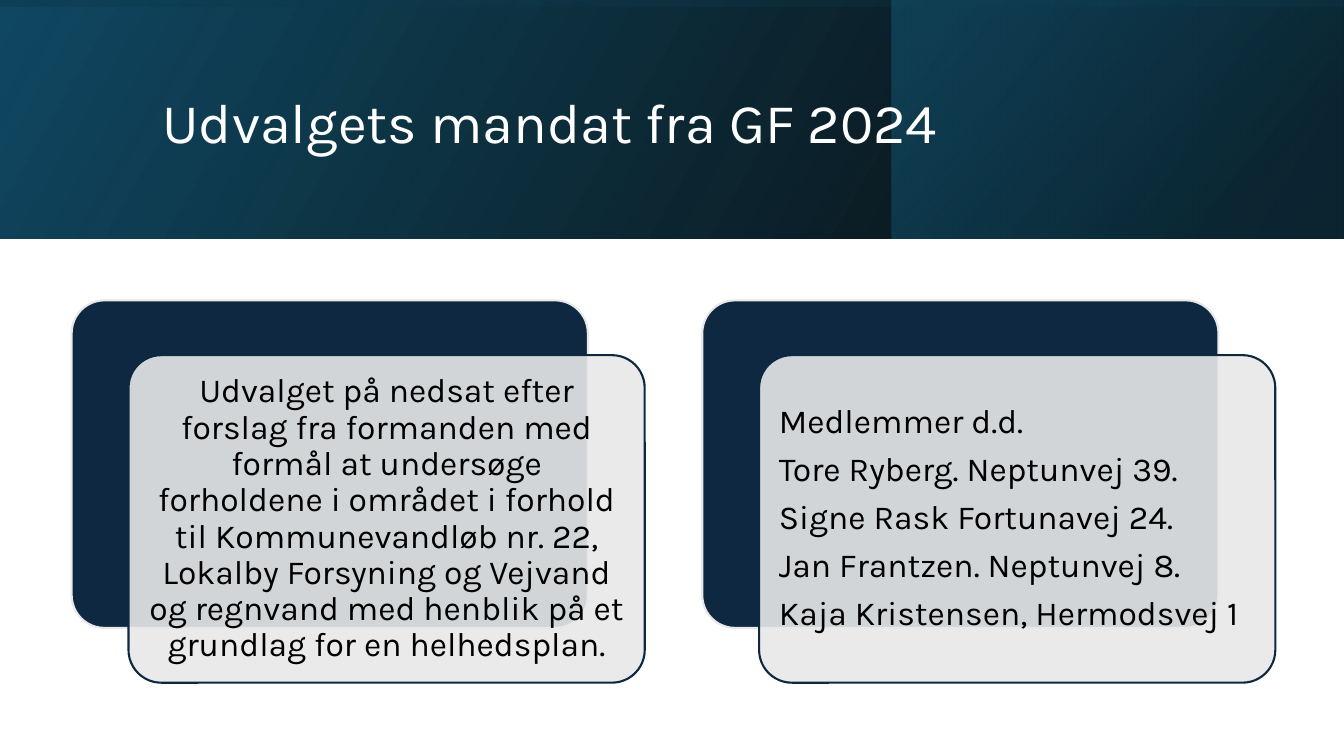
from dataclasses import dataclass

from lxml import etree
from pptx import Presentation
from pptx import util as u
from pptx.dml.color import RGBColor
from pptx.enum import shapes, text
from pptx.oxml import ns


@dataclass(frozen=True)
class Theme:
    navy: str = "0E2841"
    pale: str = "E8E8E8"
    teal: str = "104862"
    sea: str = "156082"
    deep: str = "0B3041"
    black: str = "000000"
    white: str = "FFFFFF"
    font: str = "Karla"
    head: int = 40
    body: int = 24


class Deck:
    """Holds the style and the slide; lengths are percent of the slide's size."""

    def __init__(self, theme):
        self.theme = theme
        self.prs = Presentation()
        self.prs.slide_width = u.Inches(13.33)
        self.prs.slide_height = u.Inches(7.5)
        self.slide = self.prs.slides.add_slide(self.prs.slide_layouts[3])

    def frame(self, x, y, w, h):
        wide, high = self.prs.slide_width, self.prs.slide_height
        return [round(part * size / 100)
                for part, size in ((x, wide), (y, high), (w, wide), (h, high))]

    def shape(self, kind, box):
        item = self.slide.shapes.add_shape(kind, *self.frame(*box))
        item.shadow.inherit = False
        return item

    def alpha(self, color, share):
        etree.SubElement(color, ns.qn("a:alpha"), val=str(share * 1000))

    def band(self, box, angle, stops, turn=0):
        """Mirrored gradient strip; each stop is place, colour, opacity."""
        item = self.shape(shapes.MSO_SHAPE.RECTANGLE, box)
        item.line.fill.background()
        item.rotation = turn
        props = item._element.spPr
        props.find(ns.qn("a:xfrm")).set("flipH", "1")
        item.fill.gradient()
        grad = props.find(ns.qn("a:gradFill"))
        grad.find(ns.qn("a:lin")).set("ang", str(angle * 60000))
        rows = grad.find(ns.qn("a:gsLst"))
        for old in list(rows):
            rows.remove(old)
        for place, color, share in stops:
            stop = etree.SubElement(rows, ns.qn("a:gs"), pos=str(place * 1000))
            tone = etree.SubElement(stop, ns.qn("a:srgbClr"), val=color)
            self.alpha(tone, share)

    def panel(self, box, fill, line, share=100):
        item = self.shape(shapes.MSO_SHAPE.ROUNDED_RECTANGLE, box)
        item.adjustments[0] = 0.1
        item.fill.solid()
        item.fill.fore_color.rgb = RGBColor.from_string(fill)
        if share < 100:
            self.alpha(item._element.spPr.find(".//" + ns.qn("a:srgbClr")), share)
        item.line.color.rgb = RGBColor.from_string(line)
        item.line.width = u.Pt(1.5)

    def words(self, slot, box, lines, size, color, align, after=0):
        """Fills a placeholder and lifts it above what is drawn so far."""
        item = self.slide.placeholders[slot]
        item.left, item.top, item.width, item.height = self.frame(*box)
        self.slide.shapes._spTree.append(item._element)
        body = item.text_frame
        body.word_wrap = True
        body.auto_size = text.MSO_AUTO_SIZE.NONE
        body.vertical_anchor = text.MSO_ANCHOR.MIDDLE
        body.margin_left = body.margin_right = u.Inches(0.1)
        body.margin_top = body.margin_bottom = u.Inches(0.1)
        for i, line in enumerate(lines):
            para = body.paragraphs[0] if i == 0 else body.add_paragraph()
            props = para._p.get_or_add_pPr()
            props.set("marL", "0")
            props.set("indent", "0")
            etree.SubElement(props, ns.qn("a:buNone"))
            para.alignment = align
            para.line_spacing = 0.9
            para.space_before = u.Pt(0)
            para.space_after = u.Pt(after)
            run = para.add_run()
            run.text = line
            run.font.name = self.theme.font
            run.font.size = u.Pt(size)
            run.font.color.rgb = RGBColor.from_string(color)

    def card(self, slot, x, lines, align):
        t, y, w, h = self.theme, 39.73, 38.41, 43.33
        self.panel((x, y, w, h), t.navy, t.pale)
        x, y = x + 4.23, y + 7.25
        self.panel((x, y, w, h), t.pale, t.navy, 90)
        inner = (x + 0.72, y + 1.27, w - 1.44, h - 2.54)
        self.words(slot, inner, lines, t.body, t.black, align, t.body * 0.35)


def main():
    t = Theme()
    deck = Deck(t)
    deck.band((0, 0, 100, 31.6), 330, [(0, t.black, 96), (100, t.teal, 100)])
    deck.band((66.32, 0, 33.61, 31.6), 320, [(19, t.deep, 68), (100, t.sea, 48)])
    deck.band((41.11, -73.07, 17.78, 177.73), 350,
              [(23, t.teal, 16), (99, t.black, 45)], 270)
    deck.words(0, (11.33, 5.07, 79.74, 22.93), ["Udvalgets mandat fra GF 2024"],
               t.head, t.white, text.PP_ALIGN.LEFT)
    cards = [
        (["Udvalget på nedsat efter forslag fra formanden med formål at undersøge "
          "forholdene i området i forhold til Kommunevandløb nr. 22, Lokalby "
          "Forsyning og Vejvand og regnvand med henblik på et grundlag for en "
          "helhedsplan."], text.PP_ALIGN.CENTER),
        (["Medlemmer d.d.", "Tore Ryberg. Neptunvej 39.", "Signe Rask Fortunavej 24.",
          "Jan Frantzen. Neptunvej 8.", "Kaja Kristensen, Hermodsvej 1"],
         text.PP_ALIGN.LEFT),
    ]
    for i, (lines, align) in enumerate(cards):
        deck.card(i + 1, 5.33 + 46.92 * i, lines, align)
    deck.prs.save("out.pptx")


if __name__ == "__main__":
    main()
